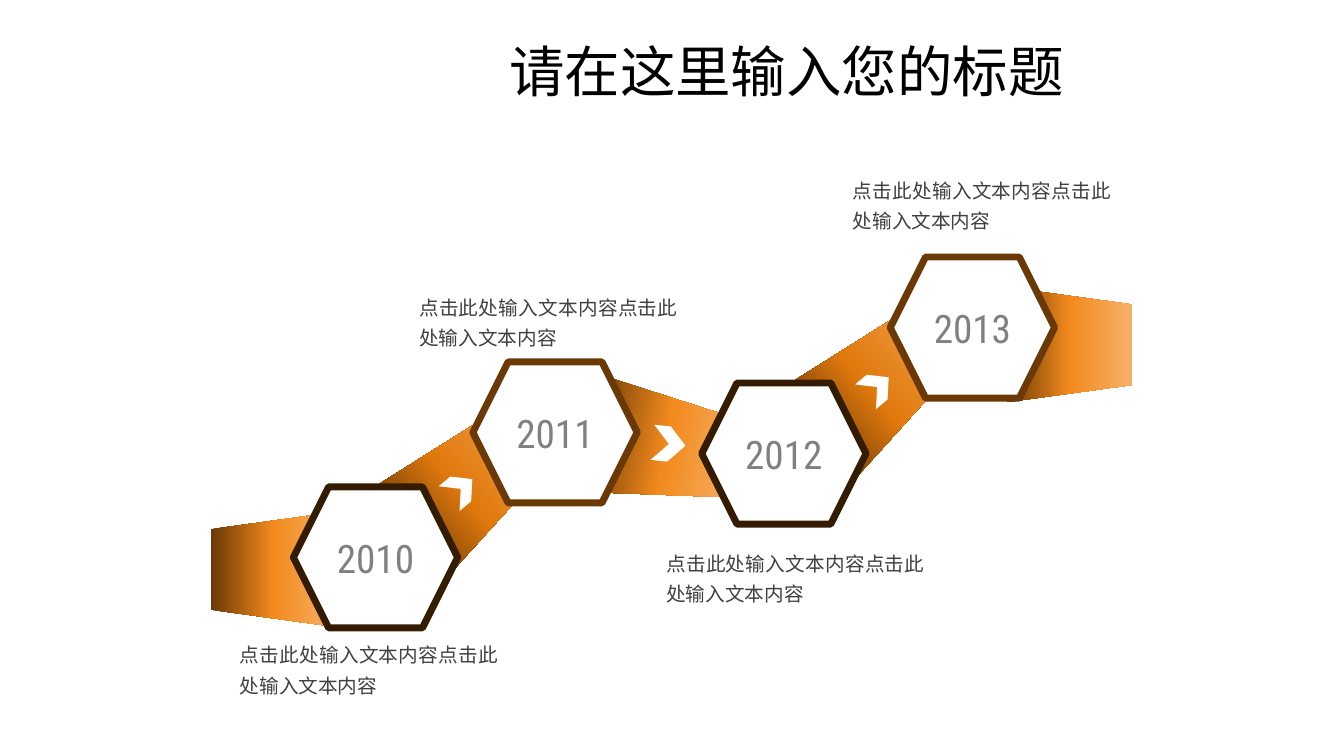
from copy import deepcopy

from lxml import etree
from pptx import Presentation
from pptx.dml.color import RGBColor
from pptx.enum.shapes import MSO_SHAPE
from pptx.enum.text import MSO_ANCHOR, MSO_AUTO_SIZE, PP_ALIGN
from pptx.oxml.ns import qn
from pptx.util import Inches, Pt

HEXAGON, CHEVRON = MSO_SHAPE.HEXAGON, MSO_SHAPE.CHEVRON
MIDDLE, NO_FIT = MSO_ANCHOR.MIDDLE, MSO_AUTO_SIZE.NONE
LEFT, CENTER, JUSTIFY = PP_ALIGN.LEFT, PP_ALIGN.CENTER, PP_ALIGN.JUSTIFY

TITLE = "请在这里输入您的标题"
CAPTION = "点击此处输入文本内容点击此处输入文本内容"
DARK, BROWN = "341C03", "6A3906"
BRIGHT_RAMP = (BROWN, "F28A1D", "F6B168")
DEEP_RAMP = (DARK, "E0790D", "F5A653")

HEXAGON_SIZE = (1.63, 1.4)
CAPTION_SIZE = (2.76, 0.61)
RIBBON_SIZE = (1.24, 1.14)
RIBBON_TAPER = 0.15  # share of the height cut off each corner of the narrow end

# year, hexagon left and top, outline, caption offset from the hexagon
STEPS = [
    ("2010", 2.91, 4.83, DARK, (-0.63, 1.48)),
    ("2011", 4.69, 3.59, BROWN, (-0.63, -0.73)),
    ("2012", 6.96, 3.8, DARK, (-0.45, 1.6)),
    ("2013", 8.83, 2.55, BROWN, (-0.47, -0.85)),
]
# left, top, rotation, colours, whether the wide end is on the left
RIBBONS = [
    (9.99, 2.85, 0, BRIGHT_RAMP, True),
    (8.01, 3.3, -40, DEEP_RAMP, True),
    (5.98, 3.86, 10, BRIGHT_RAMP, True),
    (3.95, 4.29, -40, DEEP_RAMP, True),
    (2.09, 5.08, 0, BRIGHT_RAMP, False),
]
# left, top, width, height, rotation
CHEVRONS = [
    (4.42, 4.69, 0.3, 0.32, -40),
    (6.47, 4.23, 0.33, 0.35, 6),
    (8.55, 3.68, 0.3, 0.32, -40),
]


def color(value):
    return RGBColor.from_string(value)


def write(frame, text, *, size, font, ink, align, spacing=1.0):
    frame.word_wrap = True
    frame.auto_size = NO_FIT
    frame.vertical_anchor = MIDDLE
    paragraph = frame.paragraphs[0]
    paragraph.alignment = align
    paragraph.line_spacing = spacing
    run = paragraph.add_run()
    run.text = text
    run.font.size = Pt(size)
    run.font.color.rgb = color(ink)
    run.font.name = font
    east_asian = etree.SubElement(run.font._element, qn("a:ea"))
    east_asian.set("typeface", font)


def fill_gradient(shape, ramp):
    """Fill from left to right with three evenly spaced colours."""
    shape.fill.gradient()
    shape.fill.gradient_angle = 0
    stop_list = shape._element.spPr.find(".//" + qn("a:gsLst"))
    stop_list.append(deepcopy(stop_list[-1]))
    for index, stop in enumerate(shape.fill.gradient_stops):
        stop.position = index / 2
        stop.color.rgb = color(ramp[index])


def add_ribbon(slide, left, top, rotation, ramp, wide_left):
    width, height = RIBBON_SIZE
    cut = height * RIBBON_TAPER
    left_cut, right_cut = (0, cut) if wide_left else (cut, 0)
    right, bottom = left + width, top + height
    corners = [
        (left, top + left_cut),
        (right, top + right_cut),
        (right, bottom - right_cut),
        (left, bottom - left_cut),
    ]
    points = [(Inches(x), Inches(y)) for x, y in corners]
    builder = slide.shapes.build_freeform(*points[0])
    builder.add_line_segments(points[1:], close=True)
    ribbon = builder.convert_to_shape()
    ribbon.shadow.inherit = False
    ribbon.line.fill.background()
    fill_gradient(ribbon, ramp)
    ribbon.rotation = rotation


def add_white_shape(slide, kind, left, top, width, height):
    box = map(Inches, (left, top, width, height))
    shape = slide.shapes.add_shape(kind, *box)
    shape.shadow.inherit = False
    shape.fill.solid()
    shape.fill.fore_color.rgb = color("FFFFFF")
    return shape


def add_chevron(slide, left, top, width, height, rotation):
    chevron = add_white_shape(slide, CHEVRON, left, top, width, height)
    chevron.line.fill.background()
    chevron.rotation = rotation


def add_step(slide, year, left, top, outline, caption_offset):
    """Place a year hexagon and its caption."""
    across, down = caption_offset
    box = map(Inches, (left + across, top + down, *CAPTION_SIZE))
    caption = slide.shapes.add_textbox(*box)
    write(caption.text_frame, CAPTION, size=14, font="Noto Sans CJK SC",
          ink="404040", align=JUSTIFY, spacing=1.3)

    hexagon = add_white_shape(slide, HEXAGON, left, top, *HEXAGON_SIZE)
    hexagon.line.color.rgb = color(outline)
    hexagon.line.width = Pt(5)
    frame = hexagon.text_frame
    frame.margin_left = frame.margin_right = 0
    write(frame, year, size=28, font="Roboto Condensed", ink="808080", align=CENTER)


def set_title(slide, left, top, width, height):
    title = slide.shapes.title
    title.left, title.top = Inches(left), Inches(top)
    title.width, title.height = Inches(width), Inches(height)
    write(title.text_frame, TITLE, size=39.6, font="Calibri",
          ink="000000", align=LEFT, spacing=0.9)


def main():
    presentation = Presentation()
    presentation.slide_width = Inches(13.33)
    presentation.slide_height = Inches(7.5)
    slide = presentation.slides.add_slide(presentation.slide_layouts[5])
    set_title(slide, 4.95, 0.41, 8.57, 0.66)
    for ribbon in RIBBONS:
        add_ribbon(slide, *ribbon)
    for chevron in CHEVRONS:
        add_chevron(slide, *chevron)
    for step in STEPS:
        add_step(slide, *step)
    presentation.save("out.pptx")


if __name__ == "__main__":
    main()
